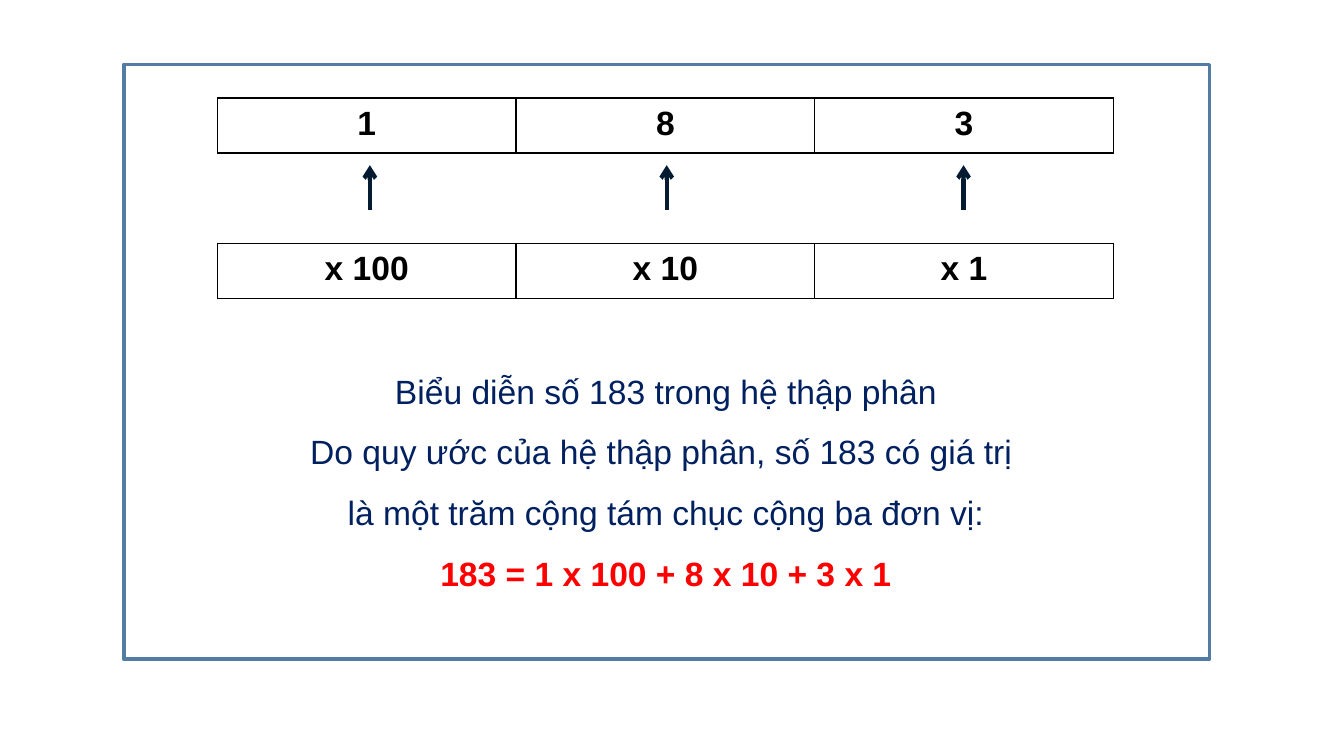
from dataclasses import dataclass

import pptx
import pptx.dml.color
import pptx.enum.shapes
import pptx.enum.text
import pptx.oxml
import pptx.oxml.ns
import pptx.util
from pptx.util import Cm

FONT = "Arial"
SIZE = pptx.util.Pt(18)
CENTER = pptx.enum.text.PP_ALIGN.CENTER
NS = pptx.oxml.ns.nsdecls("a")

LEFT, WIDTH = 4.11, 16.93
ROW = 1.04


@dataclass
class Band:
    top: float
    cells: list[str]


@dataclass
class Line:
    text: str
    color: str = "002060"
    bold: bool = False


BANDS = [
    Band(1.85, ["1", "8", "3"]),
    Band(4.6, ["x 100", "x 10", "x 1"]),
]

LINES = [
    Line("Biểu diễn số 183 trong hệ thập phân"),
    Line("Do quy ước của hệ thập phân, số 183 có giá trị "),
    Line("là một trăm cộng tám chục cộng ba đơn vị:"),
    Line("183 = 1 x 100 + 8 x 10 + 3 x 1", "FF0000", True),
]


def paint(target, color: str) -> None:
    """Give a fill or a font a solid colour."""
    if hasattr(target, "solid"):
        target.solid()
        target.fore_color.rgb = pptx.dml.color.RGBColor.from_string(color)
    else:
        target.color.rgb = pptx.dml.color.RGBColor.from_string(color)


def write(para, text: str, color: str, bold: bool) -> None:
    para.text = text
    para.alignment = CENTER
    for run in para.runs:
        run.font.name = FONT
        run.font.size = SIZE
        run.font.bold = bold
        paint(run.font, color)


def draw_frame(slide) -> None:
    frame = slide.shapes.add_shape(
        pptx.enum.shapes.MSO_SHAPE.RECTANGLE,
        Cm(2.34), Cm(1.22), Cm(20.52), Cm(11.23))
    frame.shadow.inherit = False
    paint(frame.fill, "FFFFFF")
    paint(frame.line.fill, "527CA3")
    frame.line.width = pptx.util.Pt(2)


def draw_band(slide, band: Band) -> None:
    table = slide.shapes.add_table(
        1, len(band.cells), Cm(LEFT), Cm(band.top), Cm(WIDTH), Cm(ROW)).table
    table.first_row = table.horz_banding = False
    for cell, text in zip(table.rows[0].cells, band.cells):
        write(cell.text_frame.paragraphs[0], text, "000000", True)
        cell.fill.background()
        # Borders come before the fill in the cell properties
        props = cell._tc.get_or_add_tcPr()
        for i, side in enumerate(("lnL", "lnR", "lnT", "lnB")):
            props.insert(i, pptx.oxml.parse_xml(
                f'<a:{side} {NS} w="9525"><a:solidFill>'
                f'<a:srgbClr val="000000"/></a:solidFill></a:{side}>'))


def draw_arrow(slide, x: float) -> None:
    arrow = slide.shapes.add_connector(
        pptx.enum.shapes.MSO_CONNECTOR.STRAIGHT,
        Cm(x), Cm(3.96), Cm(x), Cm(3.12))
    paint(arrow.line.fill, "041B31")
    arrow.line.width = pptx.util.Pt(2.25)
    arrow.line._get_or_add_ln().append(
        pptx.oxml.parse_xml(f'<a:tailEnd {NS} type="arrow"/>'))
    arrow._element.spPr.append(pptx.oxml.parse_xml(f"<a:effectLst {NS}/>"))


def draw_text(slide, lines: list[Line]) -> None:
    frame = slide.shapes.add_textbox(
        Cm(4.01), Cm(6.5), Cm(17.15), Cm(5.46)).text_frame
    frame.word_wrap = True
    frame.auto_size = pptx.enum.text.MSO_AUTO_SIZE.SHAPE_TO_FIT_TEXT
    frame.text = "\n".join(line.text for line in lines)
    for para, line in zip(frame.paragraphs, lines):
        write(para, line.text, line.color, line.bold)
        para.line_spacing = 1.5


def main() -> None:
    deck = pptx.Presentation()
    deck.slide_width, deck.slide_height = Cm(25.4), Cm(14.28)
    slide = deck.slides.add_slide(deck.slide_layouts[6])

    draw_frame(slide)
    # Digits above, place values below
    for band in BANDS:
        draw_band(slide, band)
    # One arrow per digit, evenly spaced
    for i in range(len(BANDS[0].cells)):
        draw_arrow(slide, 6.99 + i * 5.61)
    # Explanation
    draw_text(slide, LINES)

    deck.save("out.pptx")


if __name__ == "__main__":
    main()
